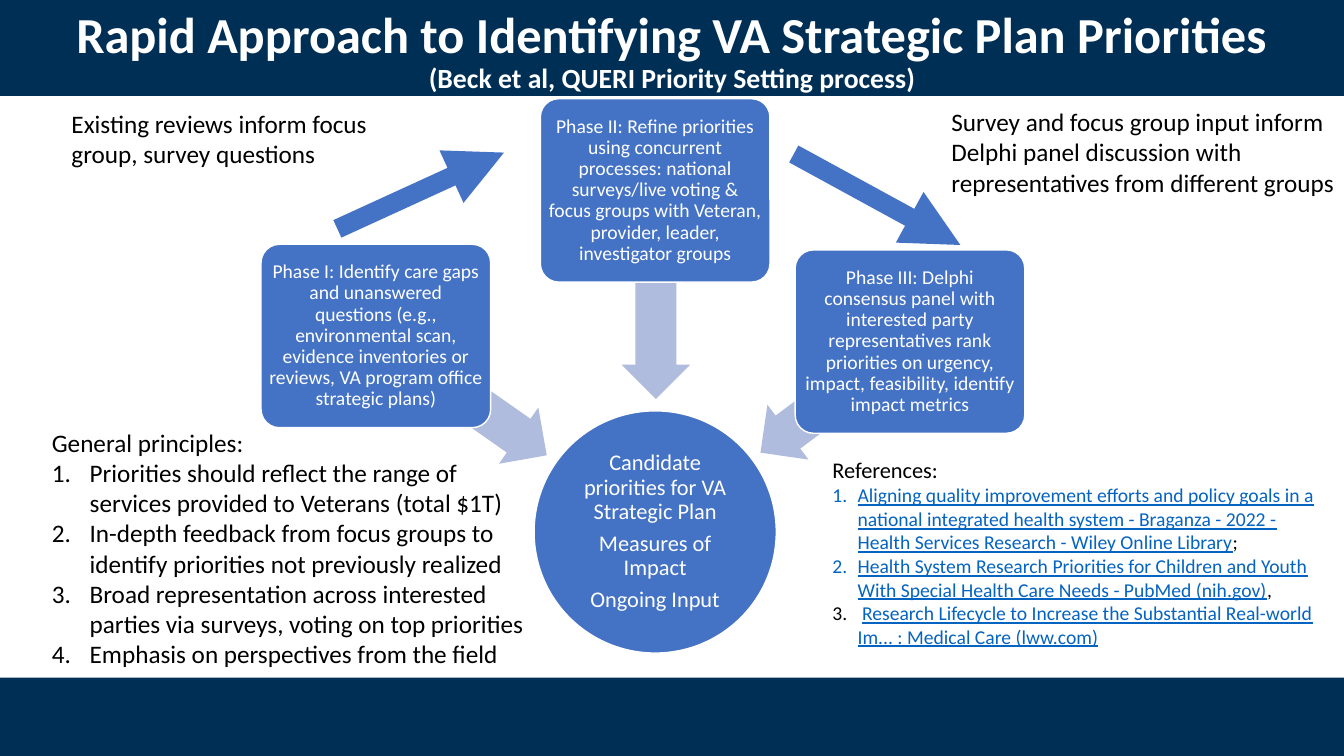
from lxml.etree import SubElement
from pptx import Presentation
from pptx.dml.color import RGBColor
from pptx.enum.shapes import MSO_CONNECTOR as Connector, MSO_SHAPE as Shape
from pptx.enum.text import MSO_ANCHOR as Anchor, MSO_AUTO_SIZE as AutoSize, PP_ALIGN as Align
from pptx.oxml.ns import qn
from pptx.util import Pt

NAVY = RGBColor(0x00, 0x2F, 0x56)
BLUE = RGBColor(0x44, 0x72, 0xC4)
PALE = RGBColor(0xB0, 0xBC, 0xDE)
LINK = RGBColor(0x05, 0x63, 0xC1)
WHITE = RGBColor(0xFF, 0xFF, 0xFF)
BLACK = RGBColor(0x00, 0x00, 0x00)
FONT = "Calibri"
WIDTH, HEIGHT = 960, 540

PHASES = [
    (186.5, 174.5, "Phase I: Identify care gaps and unanswered questions (e.g., environmental scan, "
     "evidence inventories or reviews, VA program office strategic plans)"),
    (386, 70.5, "Phase II: Refine priorities using concurrent processes: national surveys/live voting "
     "& focus groups with Veteran, provider, leader, investigator groups"),
    (568, 178.5, "Phase III: Delphi consensus panel with interested party representatives rank "
     "priorities on urgency, impact, feasibility, identify impact metrics"),
]
# left, top, width, rotation
INWARD_ARROWS = [(255, 258, 149, 215), (394, 186, 149, 270), (530, 259, 133, 323.2)]
OUTCOMES = ["Candidate priorities for VA Strategic Plan", "Measures of Impact", "Ongoing Input"]
PRINCIPLES = [
    "Priorities should reflect the range of services provided to Veterans (total $1T)",
    "In-depth feedback from focus groups to identify priorities not previously realized",
    "Broad representation across interested parties via surveys, voting on top priorities",
    "Emphasis on perspectives from the field",
]
# text before, cited work, text after
REFERENCES = [
    ("", "Aligning quality improvement efforts and policy goals in a national integrated health system "
     "- Braganza - 2022 - Health Services Research - Wiley Online Library", ";"),
    ("", "Health System Research Priorities for Children and Youth With Special Health Care Needs "
     "- PubMed (nih.gov)", ","),
    (" ", "Research Lifecycle to Increase the Substantial Real-world Im... : Medical Care (lww.com)", ""),
]


def add_span(para, text, size, color=BLACK, bold=False, underline=False):
    span = para.add_run()
    span.text = text
    font = span.font
    font.name, font.size, font.bold, font.underline = FONT, Pt(size), bold, underline
    font.color.rgb = color


def next_para(frame):
    """Return the empty first paragraph, or a new one after existing text."""
    first = frame.paragraphs[0]
    return frame.add_paragraph() if first.runs else first


def number_para(para, indent):
    props = para._p.get_or_add_pPr()
    props.set("marL", str(Pt(indent)))
    props.set("indent", str(-Pt(indent)))
    SubElement(props, qn("a:buFont"), typeface="+mj-lt")
    SubElement(props, qn("a:buAutoNum"), type="arabicPeriod")


def add_shape(page, kind, left, top, width, height, fill, outlined=False):
    shape = page.shapes.add_shape(kind, Pt(left), Pt(top), Pt(width), Pt(height))
    shape.shadow.inherit = False
    shape.fill.solid()
    shape.fill.fore_color.rgb = fill
    if outlined:
        shape.line.color.rgb = WHITE
        shape.line.width = Pt(1)
    else:
        shape.line.fill.background()
    return shape


def add_bar(page, top, height):
    """Add a full-width band behind everything else."""
    bar = add_shape(page, Shape.RECTANGLE, 0, top, WIDTH, height, NAVY)
    page.shapes._spTree.insert(2, bar._element)


def fill_centered(shape, texts, size, inset, space_after=0):
    frame = shape.text_frame
    frame.word_wrap = True
    frame.vertical_anchor = Anchor.MIDDLE
    frame.margin_left = frame.margin_right = frame.margin_top = frame.margin_bottom = Pt(inset)
    for text in texts:
        para = next_para(frame)
        para.alignment = Align.CENTER
        para.line_spacing = 0.9
        para.space_after = Pt(space_after)
        add_span(para, text, size, WHITE)


def add_phase(page, left, top, text):
    card = add_shape(page, Shape.ROUNDED_RECTANGLE, left, top, 164, 131, BLUE, outlined=True)
    card.adjustments[0] = 0.1
    fill_centered(card, [text], 14, inset=2)


def add_inward_arrow(page, left, top, width, rotation):
    arrow = add_shape(page, Shape.LEFT_ARROW, left, top, width, 49, PALE)
    arrow.adjustments[0], arrow.adjustments[1] = 0.6, 0.5
    arrow.rotation = rotation


def add_flow_arrow(page, start, end):
    arrow = page.shapes.add_connector(Connector.STRAIGHT, *map(Pt, start + end))
    arrow.line.color.rgb = BLUE
    arrow.line.width = Pt(13.75)
    SubElement(arrow.line._get_or_add_ln(), qn("a:tailEnd"), type="triangle")
    SubElement(arrow._element.spPr, qn("a:effectLst"))


def add_text(page, left, top, width, height, text, size=18):
    box = page.shapes.add_textbox(Pt(left), Pt(top), Pt(width), Pt(height))
    frame = box.text_frame
    frame.word_wrap = True
    add_span(frame.paragraphs[0], text, size)
    return frame


def set_title(page, heading, source):
    title = page.shapes.title
    title.left, title.top, title.width, title.height = Pt(12), Pt(0.7), Pt(936), Pt(72.7)
    frame = title.text_frame
    frame.auto_size = AutoSize.NONE
    frame.vertical_anchor = Anchor.MIDDLE
    para = frame.paragraphs[0]
    para.alignment = Align.CENTER
    para.line_spacing = 0.9
    add_span(para, heading, 36, WHITE, bold=True)
    para.add_line_break()
    add_span(para, source, 19.8, WHITE, bold=True)


def add_principles(page):
    frame = add_text(page, 30, 301.5, 360, 204, "General principles:")
    for principle in PRINCIPLES:
        para = next_para(frame)
        number_para(para, 27)
        add_span(para, principle, 18)


def add_references(page):
    frame = add_text(page, 587.5, 322.5, 360, 145, "References:", size=16)
    for before, work, after in REFERENCES:
        para = next_para(frame)
        number_para(para, 18)
        if before:
            add_span(para, before, 14)
        add_span(para, work, 14, LINK, underline=True)
        if after:
            add_span(para, after, 14)


def main():
    deck = Presentation()
    deck.slide_width, deck.slide_height = Pt(WIDTH), Pt(HEIGHT)
    page = deck.slides.add_slide(deck.slide_layouts[5])

    add_bar(page, 0, 68.5)
    add_bar(page, 484, HEIGHT - 484)
    set_title(page, "Rapid Approach to Identifying VA Strategic Plan Priorities",
              "(Beck et al, QUERI Priority Setting process)")

    circle = add_shape(page, Shape.OVAL, 381.5, 293.5, 173, 173, BLUE, outlined=True)
    fill_centered(circle, OUTCOMES, 16, inset=1, space_after=5.6)
    for arrow, phase in zip(INWARD_ARROWS, PHASES):
        add_inward_arrow(page, *arrow)
        add_phase(page, *phase)

    add_flow_arrow(page, (241, 163.5), (360, 109))
    add_flow_arrow(page, (567, 110), (686, 175))
    add_text(page, 44, 73.5, 230, 51, "Existing reviews inform focus group, survey questions")
    survey = add_text(page, 672.5, 72.5, 287, 73, "Survey and focus group input inform Delphi panel "
                      "discussion with representatives from different groups")
    survey.margin_right = 0
    add_principles(page)
    add_references(page)
    deck.save("out.pptx")


if __name__ == "__main__":
    main()
